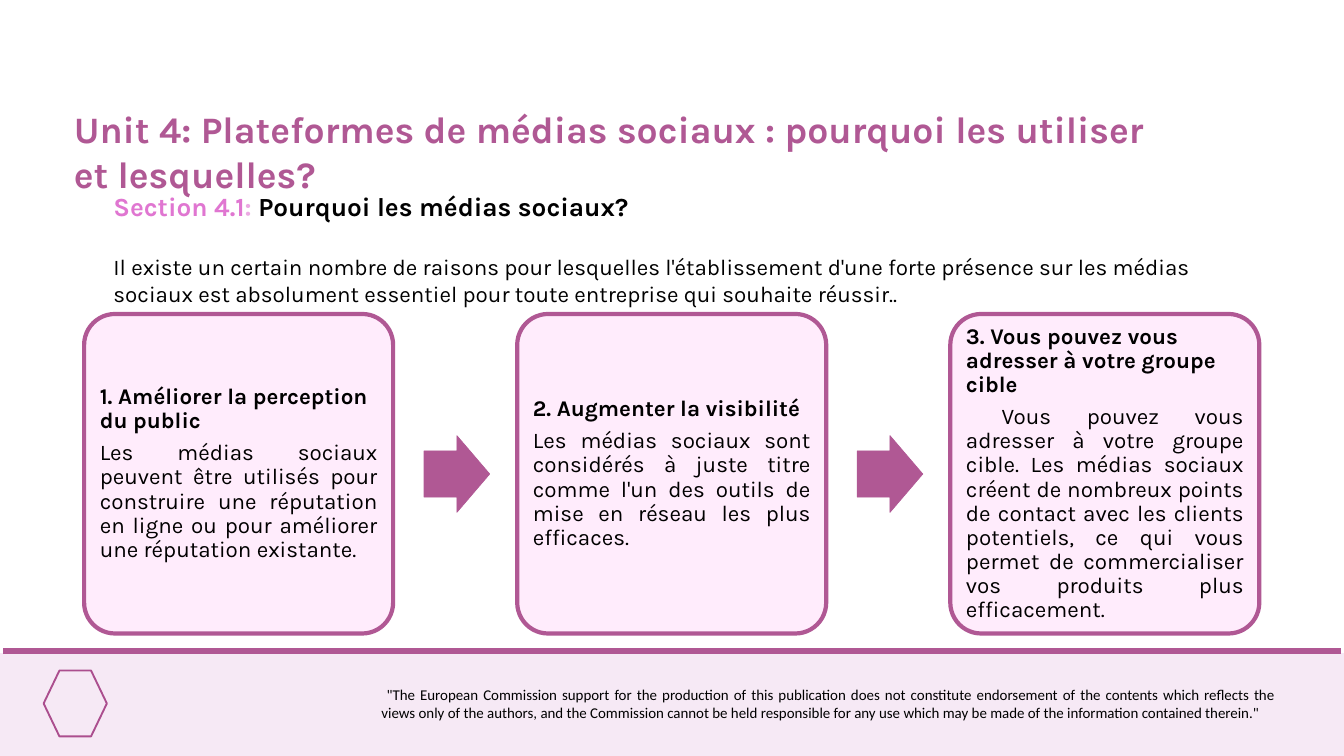
from lxml.etree import SubElement
from pptx import Presentation
from pptx.dml.color import RGBColor
from pptx.enum.shapes import MSO_CONNECTOR, MSO_SHAPE
from pptx.enum.text import MSO_ANCHOR, MSO_AUTO_SIZE, PP_ALIGN
from pptx.oxml.ns import qn
from pptx.util import Cm, Pt

PLUM = RGBColor(0xB0, 0x58, 0x94)
ICON_PLUM = RGBColor(0xAB, 0x4E, 0x8E)
ORCHID = RGBColor(0xE0, 0x76, 0xD1)
PALE_ORCHID = RGBColor(0xEC, 0xAA, 0xE3)
CARD_PINK = RGBColor(0xFF, 0xEC, 0xFC)
FOOTER_PINK = RGBColor(0xF6, 0xE9, 0xF5)
BLACK = RGBColor(0, 0, 0)

SLIDE_WIDTH, SLIDE_HEIGHT = 50.8, 28.58
FOOTER_TOP = 24.69
CARD_LEFT, CARD_TOP, CARD_WIDTH, CARD_HEIGHT = 3.18, 11.87, 11.68, 12.08
ARROW_LEFT, ARROW_TOP, ARROW_WIDTH, ARROW_HEIGHT = 16.03, 16.47, 2.48, 2.9
CARD_STEP = 16.37

CARDS = [
    ("1. Améliorer la perception du public", PP_ALIGN.LEFT,
     "Les médias sociaux peuvent être utilisés pour construire une réputation en ligne "
     "ou pour améliorer une réputation existante."),
    ("2. Augmenter la visibilité ", PP_ALIGN.JUSTIFY,
     "Les médias sociaux sont considérés à juste titre comme l'un des outils de mise en "
     "réseau les plus efficaces."),
    ("3. Vous pouvez vous adresser à votre groupe cible", PP_ALIGN.LEFT,
     " Vous pouvez vous adresser à votre groupe cible. Les médias sociaux créent de "
     "nombreux points de contact avec les clients potentiels, ce qui vous permet de "
     "commercialiser vos produits plus efficacement."),
]


class SlideBuilder:
    """Draws styled elements on the current slide."""

    def __init__(self, slide, font_name="Karla"):
        self.slide = slide
        self.font_name = font_name

    def format_run(self, run, size, color=BLACK, bold=False, font_name=None):
        run.font.name = font_name or self.font_name
        run.font.size = Pt(size)
        run.font.bold = bold
        run.font.color.rgb = color

    def shape(self, kind, left, top, width, height, fill=None, line=None, weight=0.75):
        shape = self.slide.shapes.add_shape(kind, Cm(left), Cm(top), Cm(width), Cm(height))
        shape.shadow.inherit = False
        if fill is None:
            shape.fill.background()
        else:
            shape.fill.solid()
            shape.fill.fore_color.rgb = fill
        if line is None:
            shape.line.fill.background()
        else:
            shape.line.color.rgb = line
            shape.line.width = Pt(weight)
        return shape

    def rule(self, left, right, top, weight):
        connector = self.slide.shapes.add_connector(
            MSO_CONNECTOR.STRAIGHT, Cm(left), Cm(top), Cm(right), Cm(top))
        connector.line.color.rgb = PLUM
        connector.line.width = Pt(weight)
        SubElement(connector._element.spPr, qn("a:effectLst"))

    def text_box(self, left, top, width, height, text):
        text_box = self.slide.shapes.add_textbox(Cm(left), Cm(top), Cm(width), Cm(height))
        text_frame = text_box.text_frame
        text_frame.word_wrap = True
        text_frame.auto_size = MSO_AUTO_SIZE.SHAPE_TO_FIT_TEXT
        text_frame.text = text
        return text_frame

    def card(self, left, title, title_alignment, body):
        card = self.shape(MSO_SHAPE.ROUNDED_RECTANGLE, left, CARD_TOP, CARD_WIDTH,
                          CARD_HEIGHT, CARD_PINK, PLUM, 4.5)
        card.adjustments[0] = 0.1
        text_frame = card.text_frame
        text_frame.word_wrap = True
        text_frame.vertical_anchor = MSO_ANCHOR.MIDDLE
        text_frame.margin_left = text_frame.margin_right = Cm(0.25)
        text_frame.margin_top = text_frame.margin_bottom = Cm(0.25)
        text_frame.text = f"{title}\n{body}"
        for paragraph, alignment, bold in zip(
                text_frame.paragraphs, (title_alignment, PP_ALIGN.JUSTIFY), (True, False)):
            paragraph.alignment = alignment
            paragraph.line_spacing = 0.9
            paragraph.space_after = Pt(8.4)
            self.format_run(paragraph.runs[0], 24, bold=bold)

    def arrow(self, left):
        arrow = self.shape(MSO_SHAPE.RIGHT_ARROW, left, ARROW_TOP, ARROW_WIDTH,
                           ARROW_HEIGHT, PLUM, PLUM)
        arrow.adjustments[0] = 0.6
        arrow.adjustments[1] = 0.5

    def footer(self):
        self.shape(MSO_SHAPE.RECTANGLE, 0, FOOTER_TOP, SLIDE_WIDTH,
                   SLIDE_HEIGHT - FOOTER_TOP, FOOTER_PINK)
        self.rule(0.13, 50.67, 24.61, 6.75)
        self.shape(MSO_SHAPE.HEXAGON, 1.65, 25.35, 2.39, 2.49, line=ICON_PLUM, weight=2)
        text_frame = self.text_box(
            14.17, 25.78, 34.29, 1.63,
            " \"The European Commission support for the production of this publication does "
            "not constitute endorsement of the contents which reflects the views only of the "
            "authors, and the Commission cannot be held responsible for any use which may be "
            "made of the information contained therein.\"")
        paragraph = text_frame.paragraphs[0]
        paragraph.alignment = PP_ALIGN.JUSTIFY
        self.format_run(paragraph.runs[0], 16, font_name="Calibri")

    def title(self, text):
        text_frame = self.text_box(2.54, 3.89, 42.34, 3.68, text)
        self.format_run(text_frame.paragraphs[0].runs[0], 40, PLUM, True)

    def introduction(self, heading_parts, body):
        text_frame = self.text_box(4.04, 7.09, 41.68, 4.7, "")
        heading = text_frame.paragraphs[0]
        for text, color in heading_parts:
            run = heading.add_run()
            run.text = text
            self.format_run(run, 28, color, True)
        paragraph = text_frame.add_paragraph()
        paragraph.text = body
        paragraph.space_before = Pt(33)
        self.format_run(paragraph.runs[0], 24)


def main():
    presentation = Presentation()
    presentation.slide_width = Cm(SLIDE_WIDTH)
    presentation.slide_height = Cm(SLIDE_HEIGHT)
    builder = SlideBuilder(presentation.slides.add_slide(presentation.slide_layouts[6]))

    builder.footer()
    builder.title("Unit 4: Plateformes de médias sociaux : pourquoi les utiliser et lesquelles?")
    builder.introduction(
        [("Section 4.1", ORCHID), (": ", PALE_ORCHID), ("Pourquoi les médias sociaux?", BLACK)],
        "Il existe un certain nombre de raisons pour lesquelles l'établissement d'une forte "
        "présence sur les médias sociaux est absolument essentiel pour toute entreprise qui "
        "souhaite réussir..")
    for index, (title, alignment, body) in enumerate(CARDS):
        builder.card(CARD_LEFT + index * CARD_STEP, title, alignment, body)
        if index < len(CARDS) - 1:
            builder.arrow(ARROW_LEFT + index * CARD_STEP)

    presentation.save("out.pptx")


if __name__ == "__main__":
    main()
